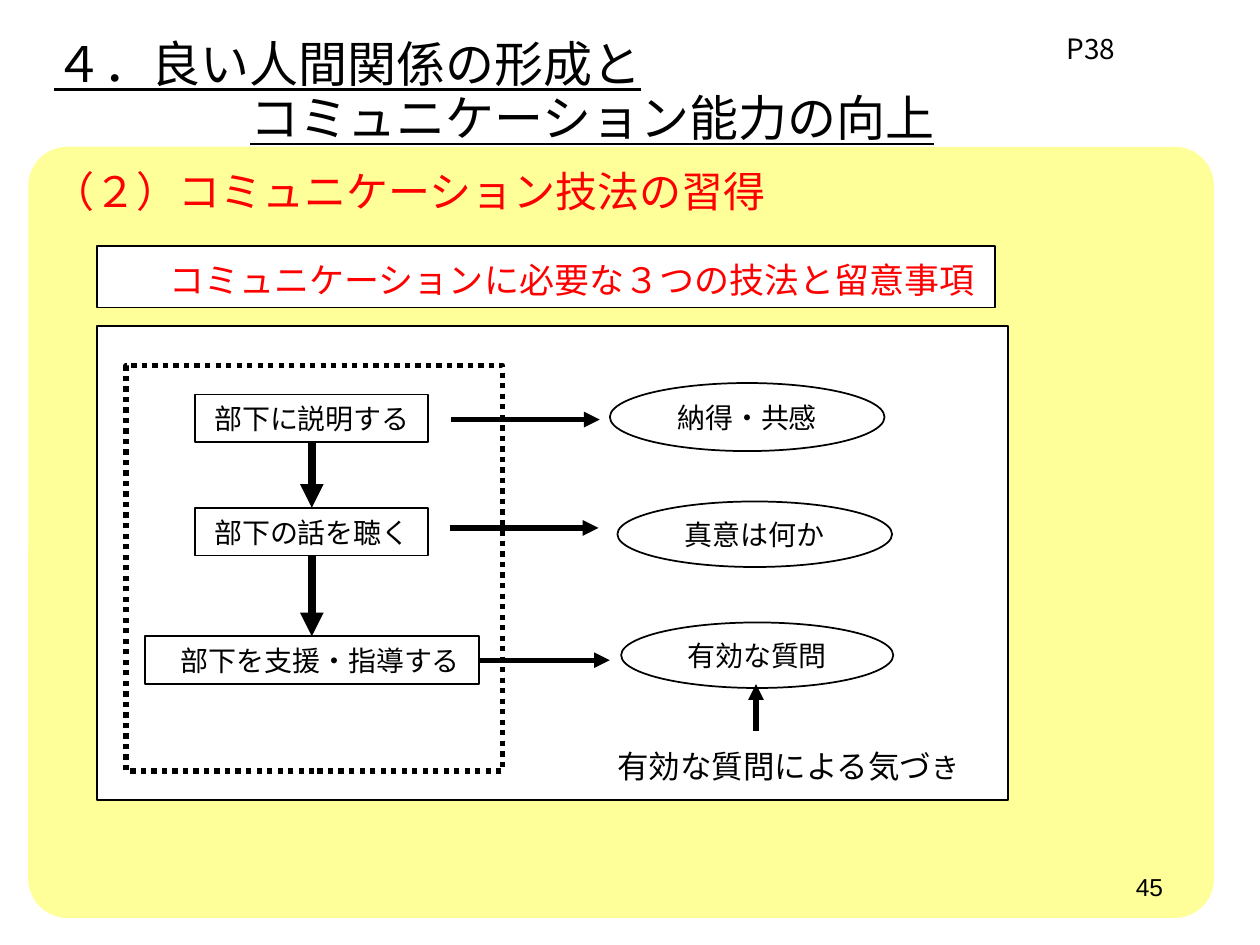
from dataclasses import dataclass
from typing import Optional

from lxml.etree import SubElement
from pptx import Presentation
from pptx.dml.color import RGBColor
from pptx.enum.dml import MSO_LINE_DASH_STYLE as Dash
from pptx.enum.shapes import MSO_CONNECTOR as Connector, MSO_SHAPE as Shape
from pptx.enum.text import MSO_ANCHOR as Anchor, MSO_AUTO_SIZE as AutoSize, PP_ALIGN as Align
from pptx.oxml.ns import qn
from pptx.util import Emu, Pt

EMU_PER_PX = 9144  # 100 px to the inch
BLACK = RGBColor(0x00, 0x00, 0x00)
WHITE = RGBColor(0xFF, 0xFF, 0xFF)
RED = RGBColor(0xFF, 0x00, 0x00)
YELLOW = RGBColor(0xFF, 0xFF, 0x99)
JAPANESE = "Noto Sans CJK JP"
TOP, LEFT, BOTTOM, RIGHT = range(4)


@dataclass(frozen=True)
class Label:
    text: str
    size: int = 16
    color: RGBColor = BLACK
    align: Align = Align.RIGHT
    leading: Optional[int] = 20
    anchor: Anchor = Anchor.TOP
    wrap: bool = True
    font: str = JAPANESE


@dataclass(frozen=True)
class Box:
    left: int
    top: int
    width: int
    height: int
    label: Optional[Label] = None
    shape: Shape = Shape.RECTANGLE
    fill: Optional[RGBColor] = WHITE
    line: Optional[RGBColor] = BLACK
    weight: float = 1


@dataclass(frozen=True)
class Arrow:
    start: tuple[int, int]
    end: tuple[int, int]
    weight: float = 3


def px(length: int) -> Emu:
    return Emu(length * EMU_PER_PX)


def format_paragraph(para, label: Label) -> None:
    para.alignment = label.align
    if label.leading:
        para.line_spacing = Pt(label.leading)
    font = para.font
    font.size = Pt(label.size)
    font.color.rgb = label.color
    font.name = label.font
    # East Asian characters take their typeface from a:ea
    properties = para._p.pPr.find(qn("a:defRPr"))
    SubElement(properties, qn("a:ea"), typeface=label.font)


def write_label(frame, label: Label) -> None:
    frame.word_wrap = label.wrap
    frame.vertical_anchor = label.anchor
    para = frame.paragraphs[0]
    para.text = label.text
    format_paragraph(para, label)


def add_box(slide, box: Box):
    shape = slide.shapes.add_shape(
        box.shape, px(box.left), px(box.top), px(box.width), px(box.height))
    shape.shadow.inherit = False
    if box.fill is None:
        shape.fill.background()
    else:
        shape.fill.solid()
        shape.fill.fore_color.rgb = box.fill
    if box.line is None:
        shape.line.fill.background()
    else:
        shape.line.color.rgb = box.line
        shape.line.width = Pt(box.weight)
    if box.label:
        write_label(shape.text_frame, box.label)
    return shape


def add_text(slide, left: int, top: int, width: int, height: int, label: Label) -> None:
    box = slide.shapes.add_textbox(px(left), px(top), px(width), px(height))
    write_label(box.text_frame, label)


def add_arrow(slide, arrow: Arrow):
    line = slide.shapes.add_connector(
        Connector.STRAIGHT, *map(px, arrow.start), *map(px, arrow.end))
    line.line.color.rgb = BLACK
    line.line.width = Pt(arrow.weight)
    SubElement(line.line._get_or_add_ln(), qn("a:tailEnd"), type="triangle")
    SubElement(line._element.spPr, qn("a:effectLst"))
    return line


def write_title(slide) -> None:
    title = slide.shapes.title
    title.left, title.top, title.width, title.height = map(px, (33, 25, 766, 98))
    frame = title.text_frame
    frame.auto_size = AutoSize.NONE
    style = Label("４．良い人間関係の形成と", 28, align=Align.LEFT, leading=31)
    write_label(frame, style)
    second = frame.add_paragraph()
    second.text = "コミュニケーション能力の向上"
    format_paragraph(second, style)
    indent = 4 * Pt(style.size)  # four full-width characters
    second._p.pPr.set("marL", str(indent))
    for para in frame.paragraphs:
        para.font.underline = True


def add_ellipse(slide, left: int, top: int, width: int, height: int,
                text: str, leading: Optional[int] = None) -> None:
    label = Label(text, align=Align.CENTER, leading=leading, anchor=Anchor.MIDDLE)
    add_box(slide, Box(left, top, width, height, label, Shape.OVAL))


def main() -> None:
    deck = Presentation()
    deck.slide_width, deck.slide_height = px(1000), px(750)
    slide = deck.slides.add_slide(deck.slide_layouts[5])
    write_title(slide)
    add_text(slide, 799, 22, 134, 36, Label("P38", align=Align.CENTER, leading=18))

    heading = Label("（２）コミュニケーション技法の習得", 24, RED, Align.LEFT, 29)
    panel = add_box(slide, Box(23, 117, 940, 611, heading,
                               Shape.ROUNDED_RECTANGLE, YELLOW, YELLOW, 0.75))
    panel.adjustments[0] = 0.05
    add_text(slide, 847, 687, 86, 42,
             Label("45", 14, leading=None, font="Arial"))

    add_box(slide, Box(77, 259, 723, 376))
    explain = add_box(slide, Box(155, 313, 185, 38, Label("部下に説明する ")))
    add_ellipse(slide, 484, 304, 218, 54, "納得・共感", 20)
    add_ellipse(slide, 490, 398, 218, 52, "真意は何か")
    add_ellipse(slide, 493, 494, 216, 52, "有効な質問")
    listen = add_box(slide, Box(155, 403, 185, 38, Label("部下の話を聴く ", wrap=False)))
    support = add_box(slide, Box(115, 505, 265, 38, Label("部下を支援・指導する ")))
    steps_frame = add_box(slide, Box(100, 290, 299, 322, fill=None, weight=3))
    steps_frame.line.dash_style = Dash.ROUND_DOT

    insight = add_box(slide, Box(437, 590, 339, 38,
                                 Label("有効な質問による気づ", 18), line=None))
    ending = insight.text_frame.paragraphs[0].add_run()
    ending.text = "き "
    ending.font.size = Pt(16)
    add_box(slide, Box(77, 195, 713, 49, Label(
        "コミュニケーションに必要な３つの技法と留意事項 ", 20, RED, leading=28)))

    for upper, lower in ((explain, listen), (listen, support)):
        step = add_arrow(slide, Arrow((247, 351), (247, 403), 4.5))
        step.begin_connect(upper, BOTTOM)
        step.end_connect(lower, TOP)
    for arrow in (Arrow((358, 333), (476, 333)),
                  Arrow((357, 419), (475, 419)),
                  Arrow((600, 580), (600, 543))):
        add_arrow(slide, arrow)
    to_question = add_arrow(slide, Arrow((380, 524), (484, 524)))
    to_question.begin_connect(support, RIGHT)

    deck.save("out.pptx")


if __name__ == "__main__":
    main()
